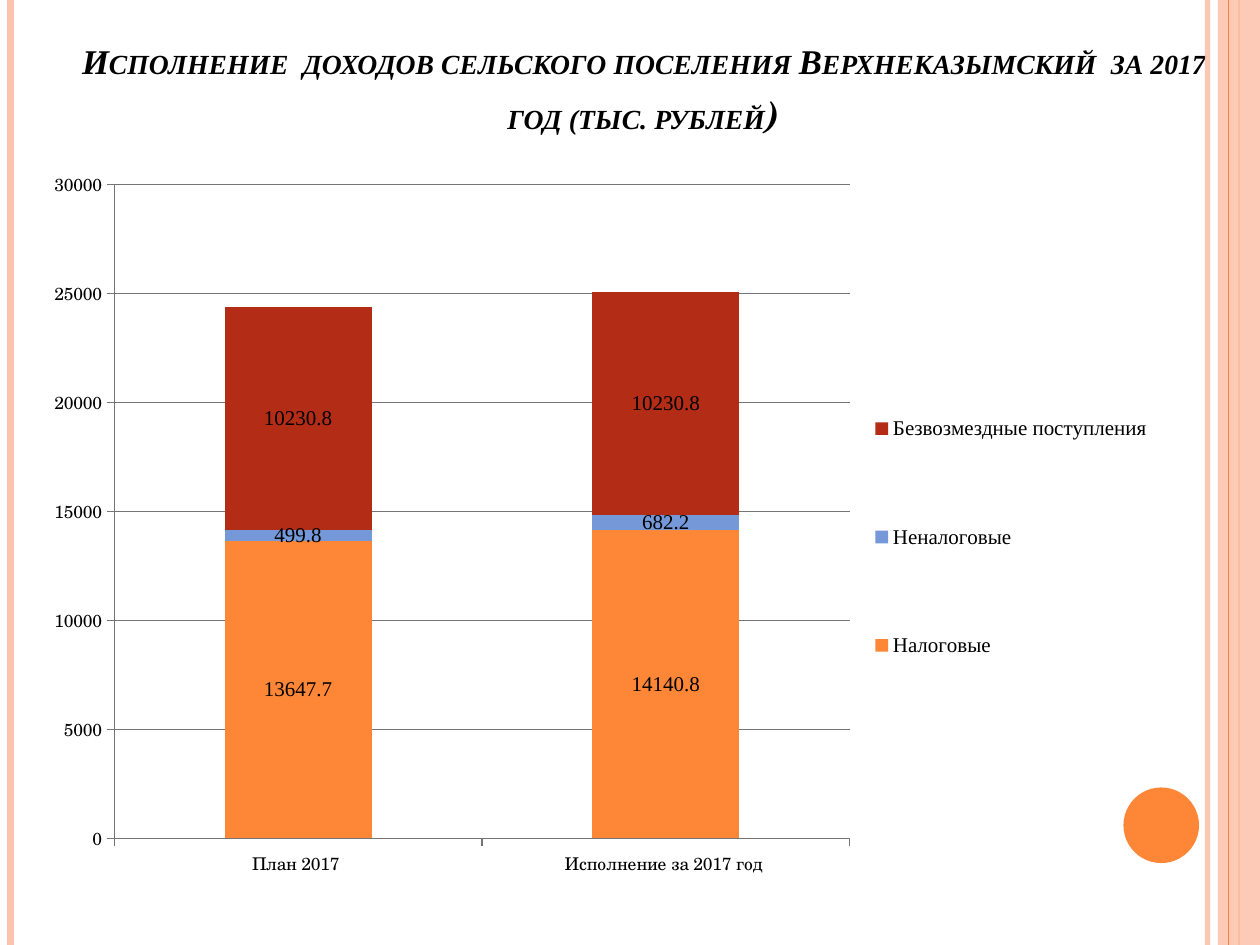
from lxml import etree
from pptx import Presentation
from pptx.chart.data import CategoryChartData
from pptx.dml.color import RGBColor
from pptx.enum.chart import XL_CHART_TYPE, XL_LEGEND_POSITION, XL_TICK_MARK
from pptx.enum.shapes import MSO_CONNECTOR, MSO_SHAPE
from pptx.enum.text import MSO_ANCHOR, MSO_AUTO_SIZE, PP_ALIGN
from pptx.oxml.ns import qn
from pptx.util import Pt

STACKED = XL_CHART_TYPE.COLUMN_STACKED
LEGEND_RIGHT = XL_LEGEND_POSITION.RIGHT
TICK_OUTSIDE = XL_TICK_MARK.OUTSIDE
TICK_NONE = XL_TICK_MARK.NONE
STRAIGHT = MSO_CONNECTOR.STRAIGHT
RECTANGLE, OVAL = MSO_SHAPE.RECTANGLE, MSO_SHAPE.OVAL
BOTTOM, CENTER = MSO_ANCHOR.BOTTOM, PP_ALIGN.CENTER
NO_AUTOFIT = MSO_AUTO_SIZE.NONE

BLACK = RGBColor(0x00, 0x00, 0x00)
PEACH = RGBColor(0xFE, 0xC3, 0xAE)
ORANGE = RGBColor(0xFE, 0x86, 0x37)
BLUE = RGBColor(0x75, 0x98, 0xD9)
RED = RGBColor(0xB3, 0x2C, 0x16)
GRAY = RGBColor(0x75, 0x75, 0x75)

SERIF, SCHOOLBOOK = "Times New Roman", "TeX Gyre Schola"
WIDTH, HEIGHT = 720, 540

CATEGORIES = ["План 2017 ", "Исполнение за 2017 год "]
SERIES = [
    ("Налоговые ", (13647.7, 14140.8), ORANGE),
    ("Неналоговые ", (499.8, 682.2), BLUE),
    ("Безвозмездные поступления ", (10230.8, 10230.8), RED),
]


def set_opacity(element, percent):
    color = next(element.iter(qn("a:srgbClr")))
    etree.SubElement(color, qn("a:alpha")).set("val", str(percent * 1000))


def set_layout(layout, x, y, w, h, inner=False):
    """Place a chart part by fractions of the chart area."""
    for child in list(layout):
        layout.remove(child)
    manual = etree.SubElement(layout, qn("c:manualLayout"))
    values = [("layoutTarget", "inner")] if inner else []
    values += [("xMode", "edge"), ("yMode", "edge"),
               ("x", x), ("y", y), ("w", w), ("h", h)]
    for name, value in values:
        etree.SubElement(manual, qn(f"c:{name}")).set("val", str(value))


def get_layout(parent, position):
    layout = parent.find(qn("c:layout"))
    if layout is None:
        layout = etree.Element(qn("c:layout"))
        parent.insert(position, layout)
    return layout


def style_font(font, name, size):
    font.name = name
    font.size = Pt(size)
    font.color.rgb = BLACK


class SlideBuilder:
    def __init__(self, slide):
        self.slide = slide

    def vertical_line(self, x, color, width, opacity=100):
        line = self.slide.shapes.add_connector(
            STRAIGHT, Pt(x), Pt(0), Pt(x), Pt(HEIGHT))
        line.line.color.rgb = color
        line.line.width = Pt(width)
        properties = line._element.spPr
        if opacity < 100:
            set_opacity(properties, opacity)
        etree.SubElement(properties, qn("a:effectLst"))

    def filled_shape(self, kind, left, top, width, height, color, opacity=100):
        shape = self.slide.shapes.add_shape(
            kind, Pt(left), Pt(top), Pt(width), Pt(height))
        shape.shadow.inherit = False
        shape.fill.solid()
        shape.fill.fore_color.rgb = color
        shape.line.fill.background()
        if opacity < 100:
            set_opacity(shape._element.spPr, opacity)

    def title(self, left, top, width, height, parts):
        title = self.slide.shapes.title
        title.left, title.top = Pt(left), Pt(top)
        title.width, title.height = Pt(width), Pt(height)
        frame = title.text_frame
        frame.word_wrap = True
        frame.auto_size = NO_AUTOFIT
        frame.vertical_anchor = BOTTOM
        paragraph = frame.paragraphs[0]
        paragraph.alignment = CENTER
        for text, font_name, size in parts:
            run = paragraph.add_run()
            run.text = text
            style_font(run.font, font_name, size)
            run.font.bold = run.font.italic = True
            run.font._element.set("cap", "small")

    def stacked_chart(self, left, top, width, height, categories, series_rows):
        data = CategoryChartData(number_format="General")
        data.categories = categories
        for name, values, _ in series_rows:
            data.add_series(name, values)
        chart = self.slide.shapes.add_chart(
            STACKED, Pt(left), Pt(top), Pt(width), Pt(height), data).chart
        chart.has_title = False
        style_font(chart.font, SCHOOLBOOK, 10)

        plot = chart.plots[0]
        plot.gap_width, plot.overlap = 150, 100
        plot.vary_by_categories = False
        for series, (_, _, color) in zip(plot.series, series_rows):
            series.format.fill.solid()
            series.format.fill.fore_color.rgb = color
            labels = series.data_labels
            labels.show_value = True
            style_font(labels.font, SERIF, 12)

        value_axis = chart.value_axis
        value_axis.minimum_scale, value_axis.maximum_scale = 0, 30000
        value_axis.major_unit = 5000
        value_axis.has_major_gridlines = True
        axes = (chart.category_axis, value_axis)
        for axis in axes:
            axis.major_tick_mark = TICK_OUTSIDE
            axis.minor_tick_mark = TICK_NONE
        for part in (*axes, value_axis.major_gridlines):
            part.format.line.color.rgb = GRAY
            part.format.line.width = Pt(0.75)

        chart.has_legend = True
        legend = chart.legend
        legend.position = LEGEND_RIGHT
        legend.include_in_layout = False
        style_font(legend.font, SERIF, 12)
        plot_area = chart._chartSpace.chart.plotArea
        set_layout(get_layout(plot_area, 0), 0.07, 0.04, 0.65, 0.89, inner=True)
        set_layout(get_layout(legend._element, 1), 0.74, 0.24, 0.25, 0.56)


def main():
    presentation = Presentation()
    presentation.slide_width, presentation.slide_height = Pt(WIDTH), Pt(HEIGHT)
    slide = presentation.slides.add_slide(presentation.slide_layouts[5])
    builder = SlideBuilder(slide)

    builder.vertical_line(690, PEACH, 3, opacity=93)
    builder.vertical_line(6, PEACH, 4.5)
    builder.vertical_line(708, ORANGE, 1.5)
    builder.filled_shape(RECTANGLE, 696, 0, 24, HEIGHT, PEACH, opacity=87)
    builder.vertical_line(702, ORANGE, 0.75)
    builder.filled_shape(OVAL, 642, 450, 43.2, 43.2, ORANGE)

    builder.title(36, 21.6, 664, 61.2, [
        ("Исполнение  доходов сельского поселения Верхнеказымский  "
         "за 2017 год (тыс. рублей", SERIF, 19.8),
        (")", SCHOOLBOOK, 27),
    ])
    builder.stacked_chart(20, 88.6, 646.6, 419.8, CATEGORIES, SERIES)
    presentation.save("out.pptx")


if __name__ == "__main__":
    main()
